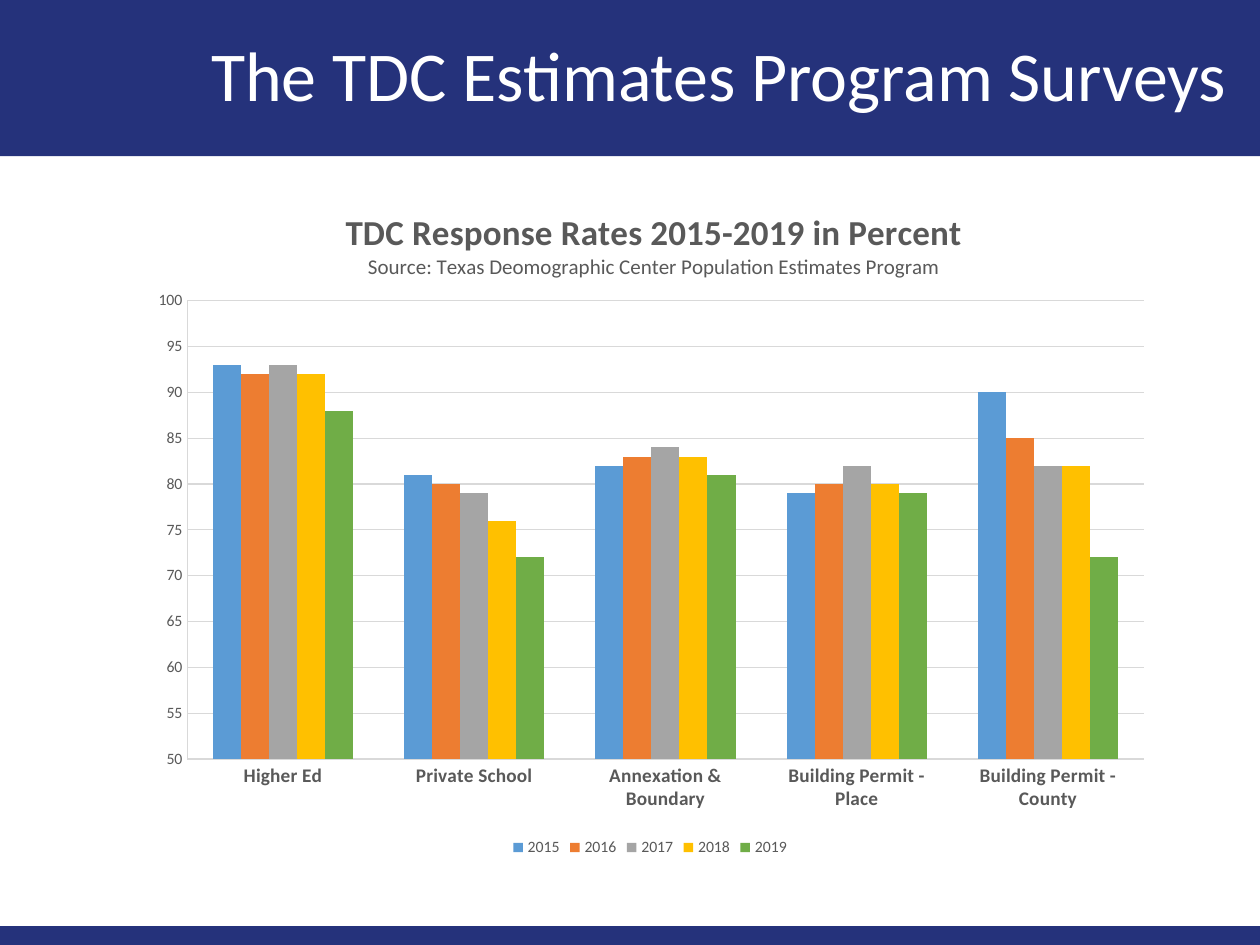
from dataclasses import dataclass

from lxml import etree
from pptx import Presentation
from pptx.chart.data import CategoryChartData
from pptx.dml.color import RGBColor
from pptx.enum import chart as ch, shapes, text
from pptx.oxml import ns
from pptx.util import Inches, Pt


@dataclass(frozen=True)
class Theme:
    font: str = "Calibri"
    navy: str = "25327B"
    white: str = "FFFFFF"
    gray: str = "595959"
    rule: str = "D9D9D9"
    series: tuple = ("5B9BD5", "ED7D31", "A5A5A5", "FFC000", "70AD47")
    title: int = 40
    chart_title: int = 20
    source: int = 12
    category: int = 11
    label: int = 9


T = Theme()
CATEGORIES = ["Higher Ed", "Private School", "Annexation & Boundary",
              "Building Permit - Place", "Building Permit - County"]
RATES = {
    "2015": (93, 81, 82, 79, 90),
    "2016": (92, 80, 83, 80, 85),
    "2017": (93, 79, 84, 82, 82),
    "2018": (92, 76, 83, 80, 82),
    "2019": (88, 72, 81, 79, 72),
}


def rgb(color):
    return RGBColor.from_string(color)


def style_font(font, size, color=T.gray, bold=False):
    font.name, font.size, font.bold = T.font, Pt(size), bold
    font.color.rgb = rgb(color)


def write(p, content, **fmt):
    r = p.add_run()
    r.text = content
    style_font(r.font, **fmt)


def style_line(line):
    line.color.rgb = rgb(T.rule)
    line.width = Pt(0.75)


def set_layout(parent, index, **values):
    """Fix a chart part's place, as fractions of the chart area."""
    for old in parent.findall(ns.qn("c:layout")):
        parent.remove(old)
    layout = etree.Element(ns.qn("c:layout"))
    manual = etree.SubElement(layout, ns.qn("c:manualLayout"))
    for tag, value in values.items():
        etree.SubElement(manual, ns.qn(f"c:{tag}")).set("val", str(value))
    parent.insert(index, layout)


def add_band(s, x, y, w, h):
    sp = s.shapes.add_shape(shapes.MSO_SHAPE.RECTANGLE, x, y, w, h)
    sp.shadow.inherit = False
    sp.fill.solid()
    sp.fill.fore_color.rgb = rgb(T.navy)
    sp.line.fill.background()


def add_title(s, x, y, w, h):
    tf = s.shapes.add_textbox(x, y, w, h).text_frame
    tf.word_wrap = True
    tf.vertical_anchor = text.MSO_ANCHOR.MIDDLE
    p = tf.paragraphs[0]
    p.alignment = text.PP_ALIGN.CENTER
    p.line_spacing = 0.9
    write(p, "The TDC Estimates Program Surveys", size=T.title, color=T.white)


def add_rates_chart(s, x, y, w, h):
    data = CategoryChartData()
    data.categories = CATEGORIES
    for year, rates in RATES.items():
        data.add_series(year, rates)
    chart = s.shapes.add_chart(ch.XL_CHART_TYPE.COLUMN_CLUSTERED,
                               x, y, w, h, data).chart
    style_font(chart.font, T.label)

    # Heading and source
    tf = chart.chart_title.text_frame
    write(tf.paragraphs[0], "TDC Response Rates 2015-2019 in Percent",
          size=T.chart_title, bold=True)
    write(tf.add_paragraph(),
          "Source: Texas Deomographic Center Population Estimates Program",
          size=T.source)
    chart.chart_title.include_in_layout = False
    title = chart.chart_title.format  # ensures the title exists
    set_layout(chart.chart_title._element, 1,
               xMode="edge", yMode="edge", x=0.2, y=0.04)

    # Columns
    plot = chart.plots[0]
    plot.gap_width, plot.overlap, plot.vary_by_categories = 182, 0, False
    for series, color in zip(plot.series, T.series):
        series.format.fill.solid()
        series.format.fill.fore_color.rgb = rgb(color)
    set_layout(chart._chartSpace.chart.plotArea, 0, layoutTarget="inner",
               xMode="edge", yMode="edge", x=0.05, y=0.18, w=0.93, h=0.67)

    # Axes
    cat, val = chart.category_axis, chart.value_axis
    for axis, size, bold in ((cat, T.category, True), (val, T.label, False)):
        axis.major_tick_mark = axis.minor_tick_mark = ch.XL_TICK_MARK.NONE
        style_font(axis.tick_labels.font, size, bold=bold)
        style_line(axis.format.line)
    val.minimum_scale, val.maximum_scale, val.major_unit = 50, 100, 5
    style_line(val.major_gridlines.format.line)

    # Legend
    chart.has_legend = True
    chart.legend.position = ch.XL_LEGEND_POSITION.BOTTOM
    chart.legend.include_in_layout = False
    style_font(chart.legend.font, T.label)


def main():
    prs = Presentation()
    prs.slide_width, prs.slide_height = Inches(10), Inches(7.5)
    s = prs.slides.add_slide(prs.slide_layouts[6])
    add_band(s, 0, 0, prs.slide_width, Inches(1.24))
    add_band(s, 0, Inches(7.35), prs.slide_width, Inches(0.15))
    add_title(s, Inches(1.53), Inches(0.07), Inches(8.35), Inches(1.11))
    add_rates_chart(s, Inches(1.08), Inches(1.41), Inches(8.16), Inches(5.43))
    prs.save("out.pptx")


if __name__ == "__main__":
    main()
